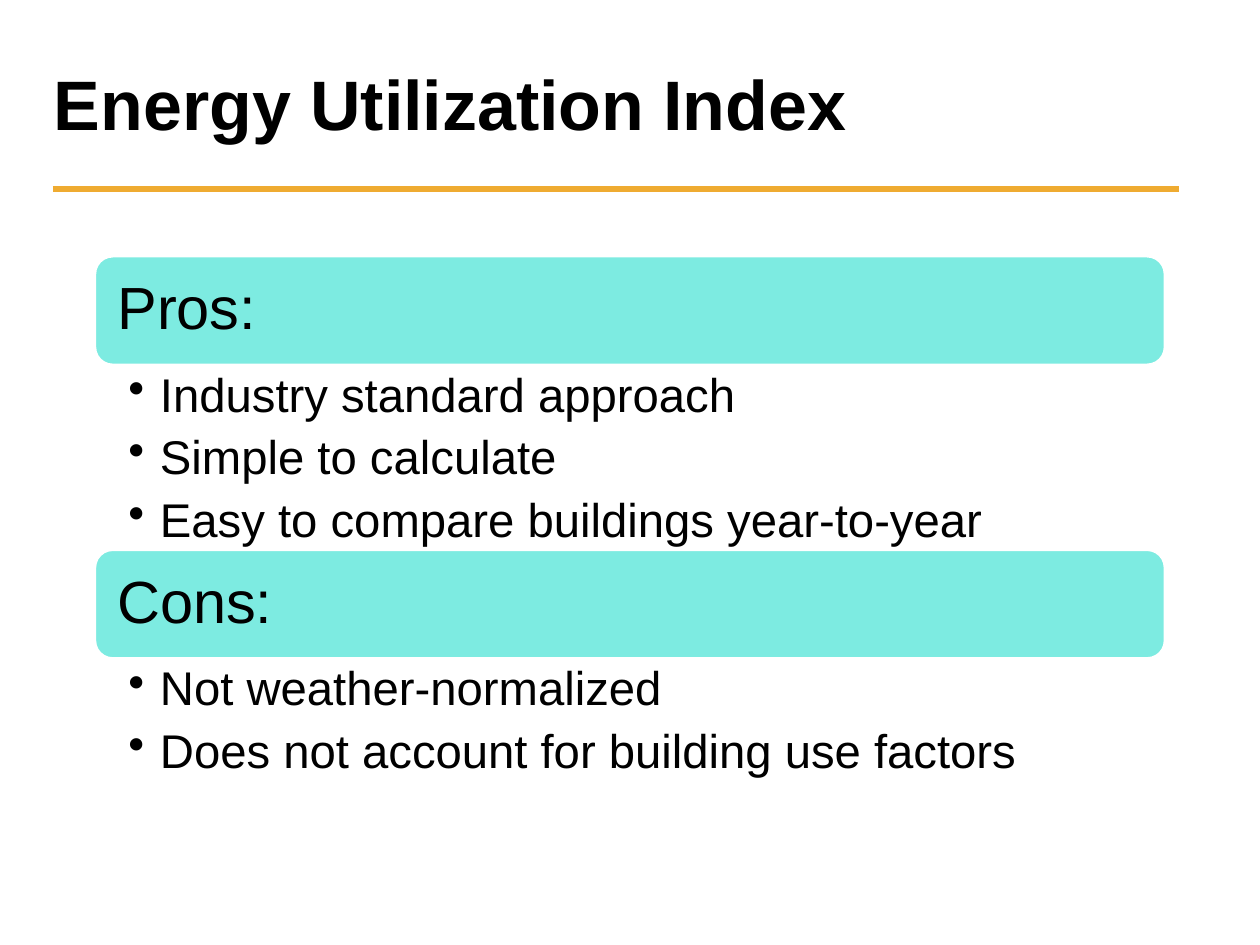
import pptx
import pptx.dml.color
import pptx.enum.shapes
import pptx.enum.text
import pptx.oxml.xmlchemy
import pptx.util
from pptx.util import Inches

COLORS = {"text": "000000", "rule": "EFAB31", "banner": "7DEBE1", "outline": "FFFFFF"}
FONT = "Arial"
LEFT, WIDTH = 0.75, 8.5
BANNER_HEIGHT = 0.87
# Each section: heading, height of its list, bullets
SECTIONS = [
    ("Pros:", 1.46, ["Industry standard approach", "Simple to calculate",
                     "Easy to compare buildings year-to-year"]),
    ("Cons:", 0.96, ["Not weather-normalized",
                     "Does not account for building use factors"]),
]


def color(name):
    return pptx.dml.color.RGBColor.from_string(COLORS[name])


def add_run(paragraph, text, size, bold=False):
    run = paragraph.add_run()
    run.text = text
    run.font.name = FONT
    run.font.size = pptx.util.Pt(size)
    run.font.bold = bold
    run.font.color.rgb = color("text")


def set_frame(frame, margins, anchor):
    """Wrap the text and set left, top, right and bottom margins in inches."""
    frame.word_wrap = True
    frame.vertical_anchor = anchor
    (frame.margin_left, frame.margin_top,
     frame.margin_right, frame.margin_bottom) = map(Inches, margins)


def add_title(slide, text):
    box = slide.shapes.add_textbox(Inches(0.33), Inches(0.27), Inches(7.17), Inches(1.08))
    set_frame(box.text_frame, (0.1, 0.05, 0.1, 0.05), pptx.enum.text.MSO_ANCHOR.MIDDLE)
    add_run(box.text_frame.paragraphs[0], text, 40, bold=True)


def add_rule(slide):
    rule = slide.shapes.add_connector(
        pptx.enum.shapes.MSO_CONNECTOR.STRAIGHT,
        Inches(0.42), Inches(1.5), Inches(9.36), Inches(1.5))
    rule.line.color.rgb = color("rule")
    rule.line.width = pptx.util.Pt(4)
    rule._element.spPr.append(pptx.oxml.xmlchemy.OxmlElement("a:effectLst"))


def add_banner(slide, top, text):
    banner = slide.shapes.add_shape(
        pptx.enum.shapes.MSO_SHAPE.ROUNDED_RECTANGLE,
        Inches(LEFT), Inches(top), Inches(WIDTH), Inches(BANNER_HEIGHT))
    banner.shadow.inherit = False
    banner.fill.solid()
    banner.fill.fore_color.rgb = color("banner")
    banner.line.color.rgb = color("outline")
    banner.line.width = pptx.util.Pt(2)
    set_frame(banner.text_frame, [0.14] * 4, pptx.enum.text.MSO_ANCHOR.MIDDLE)
    paragraph = banner.text_frame.paragraphs[0]
    paragraph.alignment = pptx.enum.text.PP_ALIGN.LEFT
    paragraph.line_spacing = 0.9
    add_run(paragraph, text, 34)


def set_bullet(paragraph):
    properties = paragraph._p.get_or_add_pPr()
    properties.set("marL", str(Inches(0.25)))
    properties.set("indent", str(Inches(-0.25)))
    bullet = pptx.oxml.xmlchemy.OxmlElement("a:buChar")
    bullet.set("char", "•")
    properties.append(bullet)


def add_bullet_list(slide, top, height, items):
    box = slide.shapes.add_textbox(Inches(LEFT), Inches(top), Inches(WIDTH), Inches(height))
    frame = box.text_frame
    set_frame(frame, (0.27, 0.05, 0.26, 0.05), pptx.enum.text.MSO_ANCHOR.TOP)
    for index, item in enumerate(items):
        paragraph = frame.add_paragraph() if index else frame.paragraphs[0]
        paragraph.level = 1
        set_bullet(paragraph)
        paragraph.line_spacing = 0.9
        paragraph.space_after = pptx.util.Pt(6.5)
        add_run(paragraph, item, 27)


def main():
    presentation = pptx.Presentation()
    presentation.slide_width = Inches(10)
    presentation.slide_height = Inches(7.5)
    slide = presentation.slides.add_slide(presentation.slide_layouts[6])

    add_rule(slide)
    add_title(slide, "Energy Utilization Index")
    top = 2.03
    for heading, list_height, items in SECTIONS:
        add_banner(slide, top, heading)
        top += BANNER_HEIGHT
        add_bullet_list(slide, top, list_height, items)
        top += list_height

    presentation.save("out.pptx")


if __name__ == "__main__":
    main()
